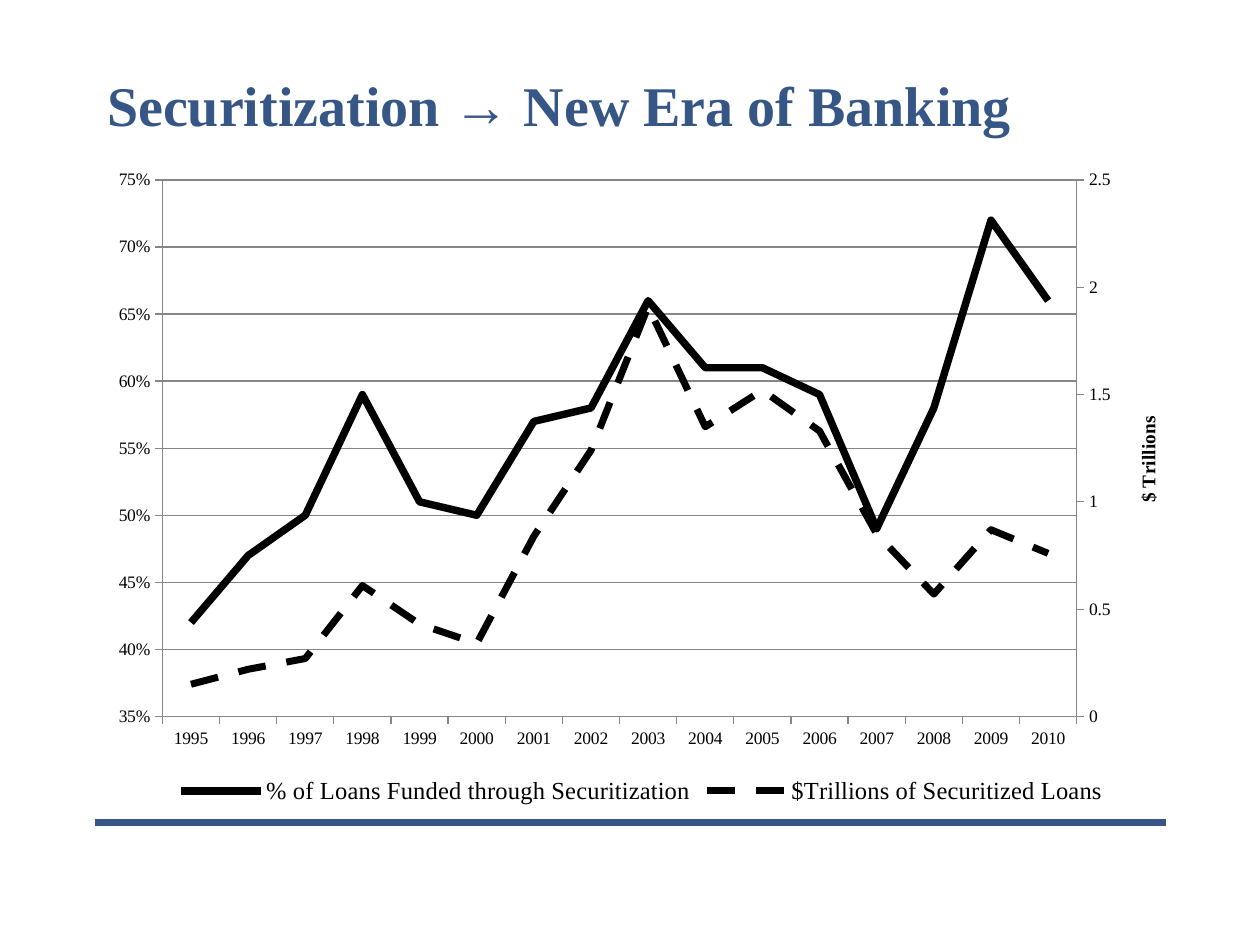
"""Build a slide with a two-axis line chart of loan securitization."""
import copy
from dataclasses import dataclass

import lxml.etree
import pptx
import pptx.chart.axis
import pptx.chart.data
import pptx.dml.color
import pptx.enum.chart
import pptx.enum.dml
import pptx.enum.shapes
import pptx.enum.text
import pptx.oxml.ns
import pptx.util

BLUE = pptx.dml.color.RGBColor(0x36, 0x56, 0x86)
BLACK = pptx.dml.color.RGBColor(0, 0, 0)
GRAY = pptx.dml.color.RGBColor(0x86, 0x86, 0x86)
FONT = "Times New Roman"
WIDTH, HEIGHT = pptx.util.Inches(10), pptx.util.Inches(7.5)
MARGIN = 0.075
PLOT_AREA = {"x": 0.06, "y": 0.034, "w": 0.839, "h": 0.823}
qn = pptx.oxml.ns.qn


@dataclass(frozen=True)
class LineSeries:
    """One plotted line and its style."""

    name: str
    values: tuple[float, ...]
    width: float
    dash: pptx.enum.dml.MSO_LINE


YEARS = [str(year) for year in range(1995, 2011)]
SERIES = (
    LineSeries(
        "% of Loans Funded through Securitization",
        (0.42, 0.47, 0.5, 0.59, 0.51, 0.5, 0.57, 0.58,
         0.66, 0.61, 0.61, 0.59, 0.49, 0.58, 0.72, 0.66),
        4.25, pptx.enum.dml.MSO_LINE.SOLID),
    LineSeries(
        "$Trillions of Securitized Loans",
        (0.15, 0.22, 0.27, 0.61, 0.43, 0.34, 0.84, 1.24,
         1.91, 1.35, 1.52, 1.33, 0.85, 0.57, 0.87, 0.76),
        4, pptx.enum.dml.MSO_LINE.DASH),
)


def share(x: float, y: float, w: float, h: float) -> tuple[int, int, int, int]:
    """Turn shares of the slide into lengths."""
    return int(x * WIDTH), int(y * HEIGHT), int(w * WIDTH), int(h * HEIGHT)


def style_font(font, size: float, color=BLACK, bold: bool = False) -> None:
    """Set the typeface, size, colour and weight of a font."""
    font.name, font.size, font.bold = FONT, pptx.util.Pt(size), bold
    font.color.rgb = color


def add_title(slide, text: str) -> None:
    """Place and fill the title placeholder."""
    sp = slide.shapes.title
    sp.left, sp.top, sp.width, sp.height = share(MARGIN, 0.05, 1 - 2 * MARGIN, 0.12)
    tf = sp.text_frame
    tf.vertical_anchor = pptx.enum.text.MSO_ANCHOR.MIDDLE
    p = tf.paragraphs[0]
    p.alignment = pptx.enum.text.PP_ALIGN.LEFT
    r = p.add_run()
    r.text = text
    style_font(r.font, 32, BLUE, True)


def add_rule(slide, y: float) -> None:
    """Draw the horizontal rule at the foot of the slide."""
    left, top, width, _ = share(MARGIN, y, 1 - 2 * MARGIN, 0)
    line = slide.shapes.add_connector(
        pptx.enum.shapes.MSO_CONNECTOR.STRAIGHT, left, top, left + width, top)
    line.line.color.rgb, line.line.width = BLUE, pptx.util.Pt(4)
    lxml.etree.SubElement(line._element.spPr, qn("a:effectLst"))


def style_axis(axis) -> None:
    """Give an axis outside ticks, a thin gray line and black labels."""
    axis.major_tick_mark = pptx.enum.chart.XL_TICK_MARK.OUTSIDE
    axis.minor_tick_mark = pptx.enum.chart.XL_TICK_MARK.NONE
    axis.format.line.color.rgb = GRAY
    axis.format.line.width = pptx.util.Pt(0.75)
    style_font(axis.tick_labels.font, 10)


def set_plot_layout(plot_area) -> None:
    """Fix the inner plot area as shares of the chart."""
    for old in plot_area.findall(qn("c:layout")):
        plot_area.remove(old)
    layout = lxml.etree.Element(qn("c:layout"))
    manual = lxml.etree.SubElement(layout, qn("c:manualLayout"))
    settings = {"layoutTarget": "inner", "xMode": "edge", "yMode": "edge", **PLOT_AREA}
    for tag, value in settings.items():
        lxml.etree.SubElement(manual, qn(f"c:{tag}")).set("val", str(value))
    plot_area.insert(0, layout)


def add_right_axis(chart, title: str) -> None:
    """Move the last series to a second plot with its own right axis."""
    cat, val = chart.category_axis._element, chart.value_axis._element
    plot_area = cat.getparent()
    left_plot = plot_area.find(qn("c:lineChart"))
    right_plot = copy.deepcopy(left_plot)
    left_plot.remove(left_plot.findall(qn("c:ser"))[-1])
    for ser in right_plot.findall(qn("c:ser"))[:-1]:
        right_plot.remove(ser)
    left_plot.addnext(right_plot)

    right_cat, right_val = copy.deepcopy(cat), copy.deepcopy(val)
    val.addnext(right_val)
    right_val.addnext(right_cat)
    ids = ("50010", "50020")
    for ref, number in zip(right_plot.findall(qn("c:axId")), ids):
        ref.set("val", number)
    for axis, own, cross in ((right_cat, *ids), (right_val, *ids[::-1])):
        axis.find(qn("c:axId")).set("val", own)
        axis.find(qn("c:crossAx")).set("val", cross)
    right_cat.find(qn("c:delete")).set("val", "1")
    right_val.find(qn("c:axPos")).set("val", "r")
    right_val.find(qn("c:crosses")).set("val", "max")

    axis = pptx.chart.axis.ValueAxis(right_val)
    axis.has_major_gridlines = False
    axis.minimum_scale, axis.maximum_scale, axis.major_unit = 0, 2.5, 0.5
    axis.tick_labels.number_format = "General"
    tf = axis.axis_title.text_frame
    r = tf.paragraphs[0].add_run()
    r.text = title
    style_font(r.font, 11, bold=True)
    body = tf._txBody.find(qn("a:bodyPr"))
    body.set("rot", "-5400000")
    body.set("vert", "horz")


def add_line_chart(slide) -> None:
    """Add the chart of securitized loans."""
    data = pptx.chart.data.CategoryChartData()
    data.categories = YEARS
    for series in SERIES:
        data.add_series(series.name, series.values)
    chart = slide.shapes.add_chart(
        pptx.enum.chart.XL_CHART_TYPE.LINE, *share(0.077, 0.167, 0.865, 0.69), data).chart
    chart.has_title = False
    style_font(chart.font, 10)
    chart.has_legend = True
    chart.legend.position = pptx.enum.chart.XL_LEGEND_POSITION.BOTTOM
    chart.legend.include_in_layout = False
    style_font(chart.legend.font, 14)

    plot = chart.plots[0]
    plot.vary_by_categories = False
    for line, series in zip(plot.series, SERIES):
        line.smooth = False
        line.format.line.color.rgb = BLACK
        line.format.line.width = pptx.util.Pt(series.width)
        line.format.line.dash_style = series.dash

    axis = chart.value_axis
    for each in (chart.category_axis, axis):
        style_axis(each)
    axis.minimum_scale, axis.maximum_scale, axis.major_unit = 0.35, 0.75, 0.05
    axis.has_major_gridlines = True
    axis.major_gridlines.format.line.color.rgb = GRAY
    axis.major_gridlines.format.line.width = pptx.util.Pt(0.75)
    axis.tick_labels.number_format = "0%"
    axis.tick_labels.number_format_is_linked = False
    set_plot_layout(axis._element.getparent())
    add_right_axis(chart, "$ Trillions")


def main() -> None:
    """Build and save the slide."""
    prs = pptx.Presentation()
    prs.slide_width, prs.slide_height = WIDTH, HEIGHT
    slide = prs.slides.add_slide(prs.slide_layouts[5])
    add_rule(slide, 0.87)
    add_title(slide, "Securitization → New Era of Banking")
    add_line_chart(slide)
    prs.save("out.pptx")


if __name__ == "__main__":
    main()
